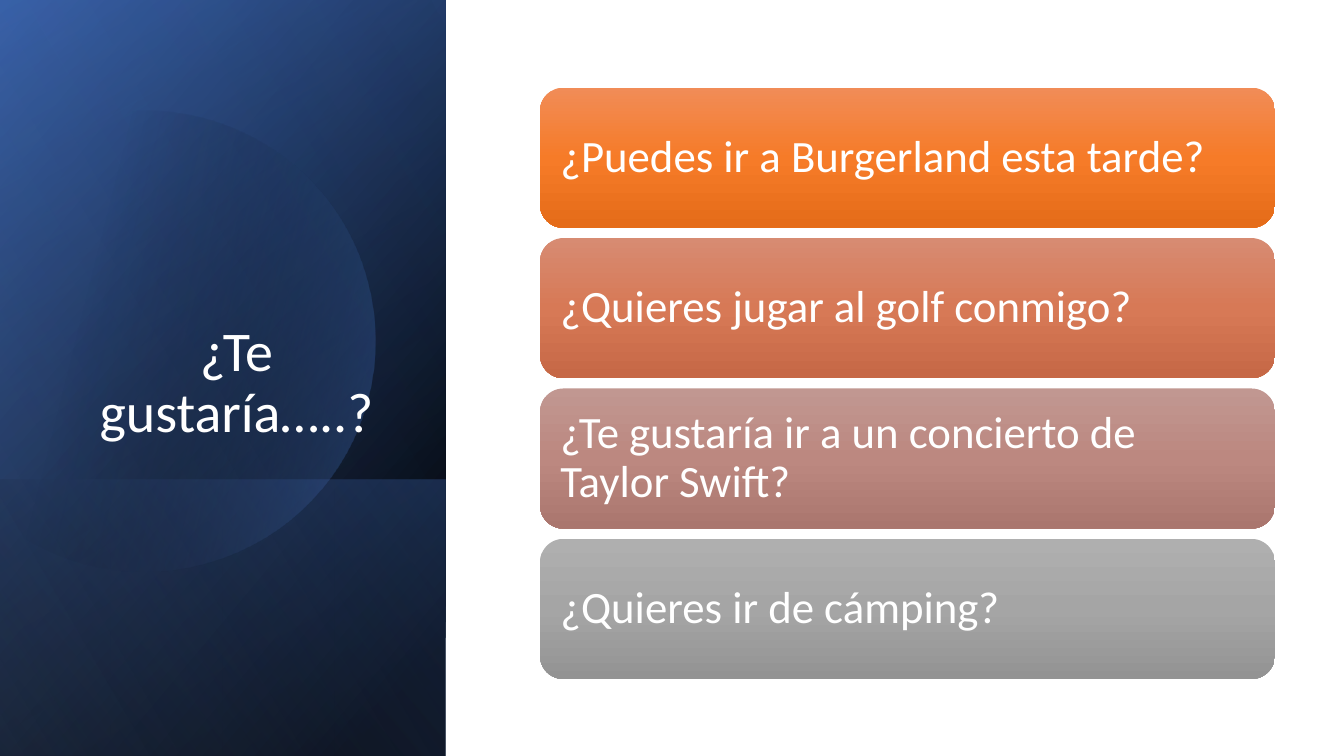
from dataclasses import dataclass

from pptx import Presentation
from pptx.dml.color import RGBColor
from pptx.enum.shapes import MSO_SHAPE
from pptx.enum.text import MSO_ANCHOR, MSO_AUTO_SIZE, PP_ALIGN
from pptx.oxml import parse_xml
from pptx.oxml.ns import nsdecls, qn
from pptx.util import Cm, Pt


@dataclass(frozen=True)
class Theme:
    font: str = "Calibri"
    title_size: int = 40
    question_size: int = 32
    line_spacing: float = 0.9
    white: str = "FFFFFF"
    black: str = "000000"
    blue: str = "4472C4"
    deep_blue: str = "2F5597"
    pale_blue: str = "8FAADC"
    orange: tuple = ("F18C57", "F67B28", "E56C19")
    terracotta: tuple = ("D78B72", "D77956", "C66846")
    rose: tuple = ("C19791", "BC8880", "AA766E")
    grey: tuple = ("AFAFAF", "A5A5A5", "939393")


theme = Theme()


def paint(shape, stops, angle):
    """Give a shape a linear gradient of (position %, colour, opacity %) stops, with no outline or shadow."""
    shape.shadow.inherit = False
    shape.line.fill.background()
    shape.fill.gradient()
    stop_xml = "".join(
        f'<a:gs pos="{position * 1000}"><a:srgbClr val="{colour}">'
        f'<a:alpha val="{opacity * 1000}"/></a:srgbClr></a:gs>'
        for position, colour, opacity in stops
    )
    gradient = parse_xml(
        f'<a:gradFill rotWithShape="1" {nsdecls("a")}><a:gsLst>{stop_xml}</a:gsLst>'
        f'<a:lin ang="{angle * 60000}" scaled="0"/></a:gradFill>'
    )
    properties = shape._element.spPr
    properties.replace(properties.find(qn("a:gradFill")), gradient)


def write(frame, words, size, alignment, anchor):
    frame.word_wrap = True
    frame.auto_size = MSO_AUTO_SIZE.NONE
    frame.vertical_anchor = anchor
    paragraph = frame.paragraphs[0]
    paragraph.alignment = alignment
    paragraph.line_spacing = theme.line_spacing
    run = paragraph.add_run()
    run.text = words
    run.font.name = theme.font
    run.font.size = Pt(size)
    run.font.color.rgb = RGBColor.from_string(theme.white)


presentation = Presentation()
presentation.slide_width = Cm(33.87)
presentation.slide_height = Cm(19.05)
slide = presentation.slides.add_slide(presentation.slide_layouts[5])
shapes = slide.shapes

# Side panel: gradient layers turned a quarter and mirrored
full_panel = (-3.91, 3.91, 19.05, 11.23)
lower_panel = (2.13, 9.96, 6.96, 11.23)
under_circle = [
    (full_panel, [(8, theme.black, 100), (100, theme.deep_blue, 100)], 50),
    (full_panel, [(0, theme.black, 0), (99, theme.blue, 46)], 30),
    (lower_panel, [(2, theme.blue, 29), (100, theme.black, 30)], 130),
]
over_circle = [(full_panel, [(0, theme.black, 0), (99, theme.pale_blue, 11)], 120)]

# Circle cut off at the left; each arc is two control points and an end point
circle_start = (3.78, 2.79)
right_arcs = [
    ((6.25, 2.84), (8.51, 4.5), (9.22, 6.98)),
    ((10.11, 10.08), (8.33, 13.28), (5.26, 14.17)),
    ((3.33, 14.73), (1.35, 14.25), (-0.08, 13.06)),
]
left_cut = [(-0.38, 12.78), (-0.38, 4.45), (0, 4.09)]
top_arcs = [
    ((0.58, 3.61), (1.27, 3.23), (2.03, 3.02)),
    ((2.62, 2.87), (3.2, 2.79), circle_start),
]
arc_steps = 24

for layers in (under_circle, over_circle):
    for (left, top, width, height), stops, angle in layers:
        layer = shapes.add_shape(MSO_SHAPE.RECTANGLE, Cm(left), Cm(top), Cm(width), Cm(height))
        layer.rotation = 90
        layer._element.spPr.find(qn("a:xfrm")).set("flipH", "1")
        paint(layer, stops, angle)

    if layers is under_circle:
        outline = [circle_start]
        for arcs, straight_points in ((right_arcs, left_cut), (top_arcs, [])):
            for first, second, end in arcs:
                start = outline[-1]
                for step in range(1, arc_steps + 1):
                    t = step / arc_steps
                    weights = ((1 - t) ** 3, 3 * t * (1 - t) ** 2, 3 * t**2 * (1 - t), t**3)
                    corners = (start, first, second, end)
                    outline.append(tuple(
                        sum(weight * corner[axis] for weight, corner in zip(weights, corners))
                        for axis in (0, 1)
                    ))
            outline.extend(straight_points)
        points = [(Cm(x), Cm(y)) for x, y in outline]
        builder = shapes.build_freeform(*points[0])
        builder.add_line_segments(points[1:], close=True)
        paint(builder.convert_to_shape(), [(29, theme.black, 0), (100, theme.blue, 43)], 14)

# Title, brought in front of the panel
title = shapes.title
title.left, title.top, title.width, title.height = Cm(1.63), Cm(4.67), Cm(8.66), Cm(6.65)
write(title.text_frame, "¿Te gustaría…..?", theme.title_size, PP_ALIGN.CENTER, MSO_ANCHOR.BOTTOM)
shapes._spTree.append(title._element)

# Invitations
questions = [
    ("¿Puedes ir a Burgerland esta tarde?", theme.orange),
    ("¿Quieres jugar al golf conmigo?", theme.terracotta),
    ("¿Te gustaría ir a un concierto de Taylor Swift?", theme.rose),
    ("¿Quieres ir de cámping?", theme.grey),
]
first_top, card_height, gap = 2.21, 3.53, 0.26
for index, (question, shades) in enumerate(questions):
    card_top = first_top + index * (card_height + gap)
    card = shapes.add_shape(
        MSO_SHAPE.ROUNDED_RECTANGLE, Cm(13.61), Cm(card_top), Cm(18.52), Cm(card_height)
    )
    paint(card, [(position, shade, 100) for position, shade in zip((0, 50, 100), shades)], 90)
    # The rounded corners already inset the text by 0.17 cm
    card.text_frame.margin_left = card.text_frame.margin_right = Cm(0.34)
    card.text_frame.margin_top = card.text_frame.margin_bottom = Cm(0.34)
    write(card.text_frame, question, theme.question_size, PP_ALIGN.LEFT, MSO_ANCHOR.MIDDLE)

presentation.save("out.pptx")
